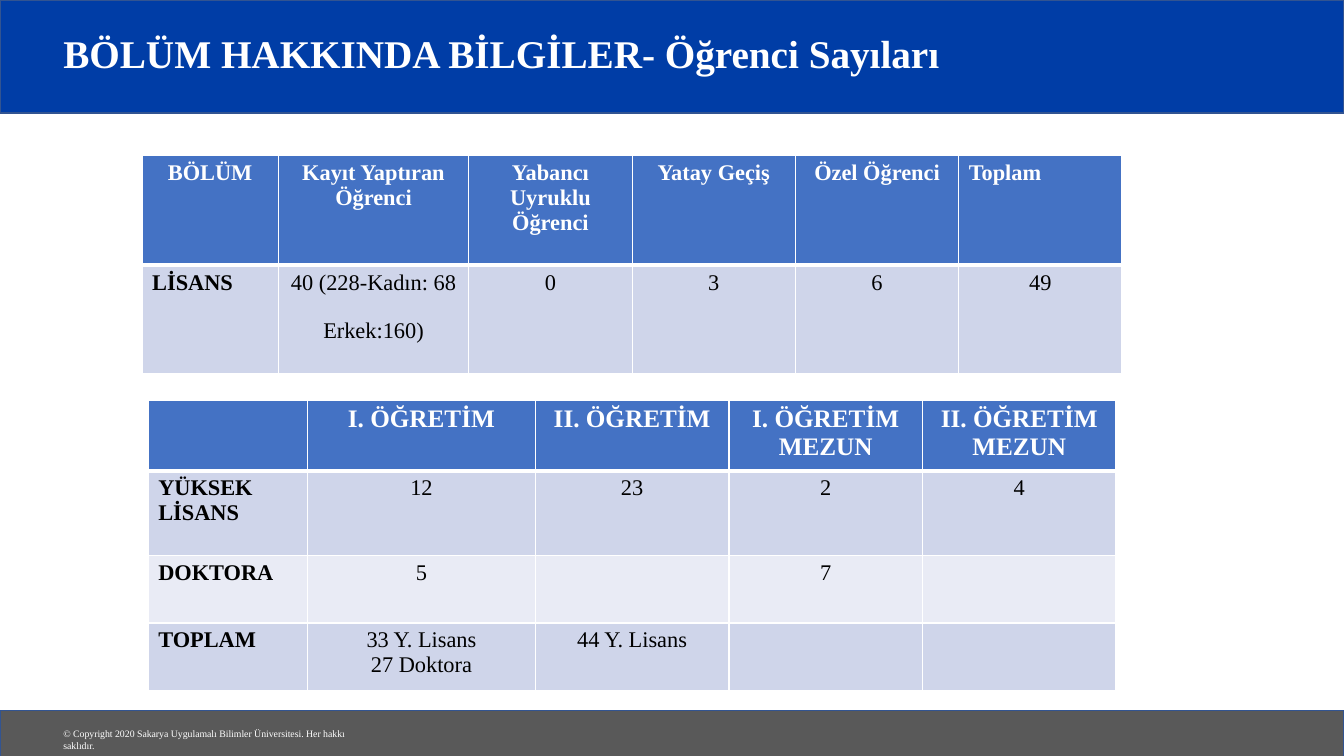
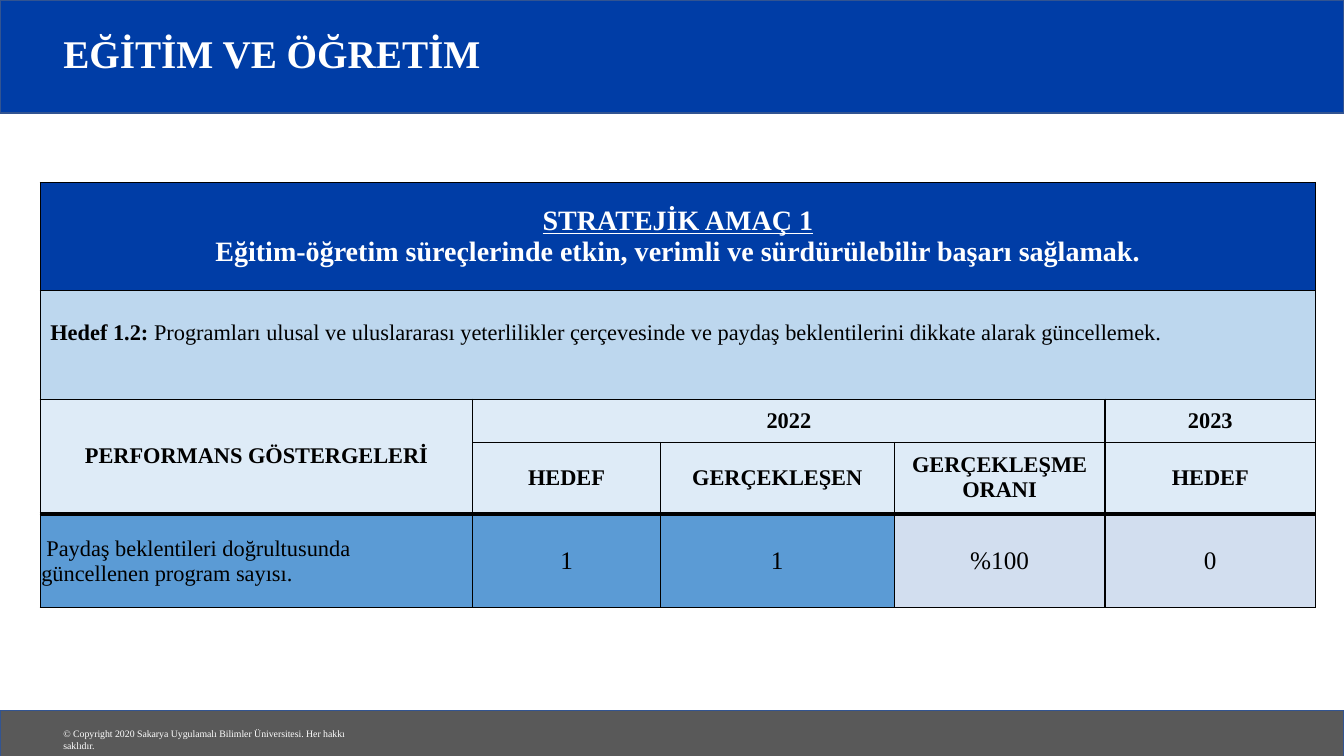
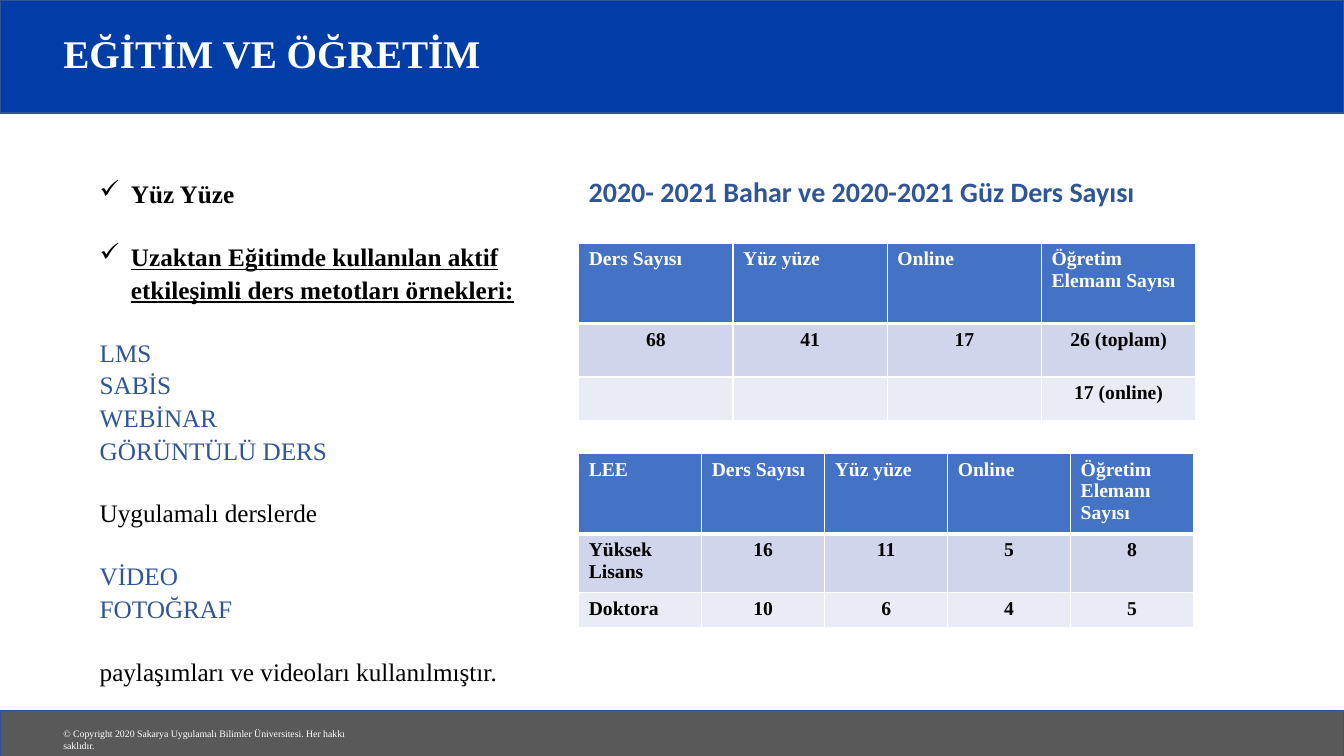
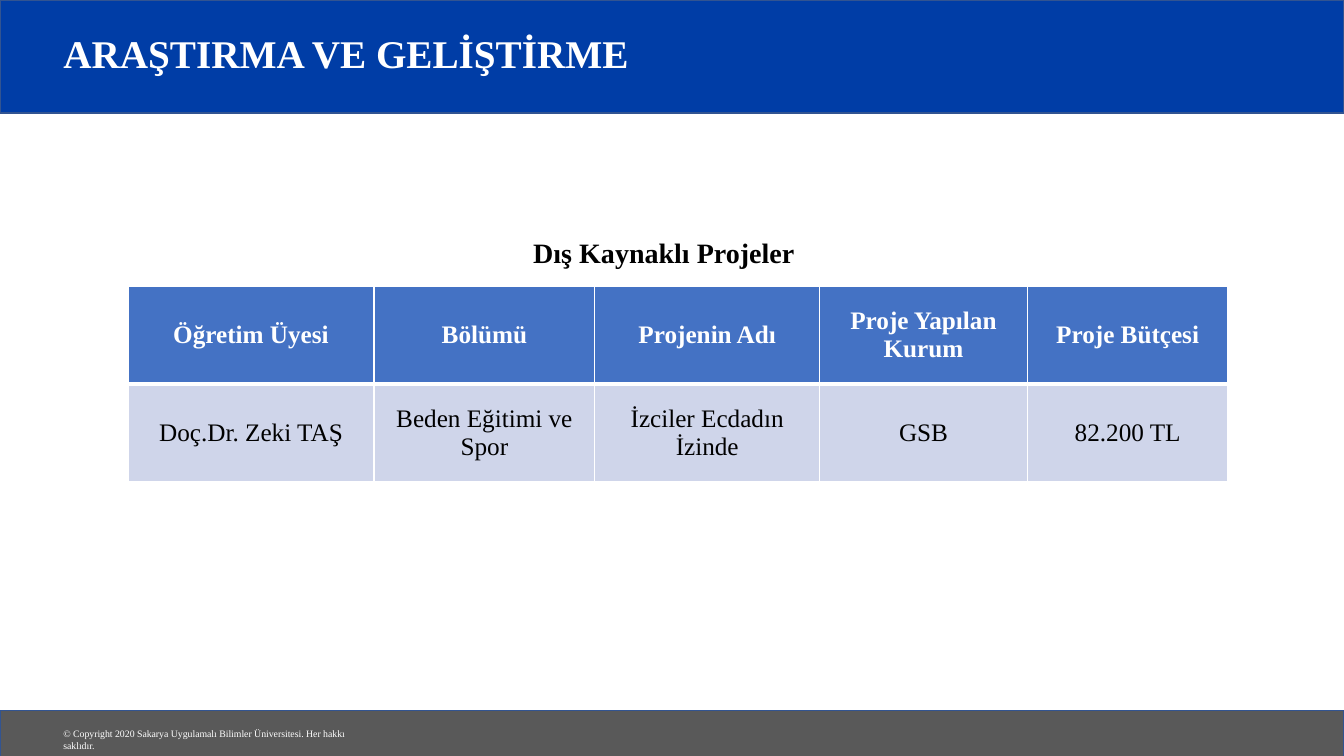
"""Build four slides on department figures, teaching goals and projects."""
from lxml import etree
from pptx import Presentation
from pptx.dml.color import RGBColor
from pptx.enum import shapes, text
from pptx.oxml import ns
from pptx.util import Inches, Pt

WHITE = RGBColor(0xFF, 0xFF, 0xFF)
BLACK = RGBColor(0x00, 0x00, 0x00)
NAVY = RGBColor(0x00, 0x3D, 0xA6)
GREY = RGBColor(0x59, 0x59, 0x59)
BAND_LINE = RGBColor(0x32, 0x54, 0x91)
LINK_BLUE = RGBColor(0x2F, 0x55, 0x97)
HEADER = RGBColor(0x44, 0x72, 0xC4)
ROW_DARK = RGBColor(0xCF, 0xD5, 0xEA)
ROW_LIGHT = RGBColor(0xE9, 0xEB, 0xF5)
GOAL_BLUE = RGBColor(0xBD, 0xD7, 0xEE)
PALE_BLUE = RGBColor(0xDE, 0xEB, 0xF7)
MID_BLUE = RGBColor(0x5B, 0x9B, 0xD5)
RESULT_BLUE = RGBColor(0xD2, 0xDE, 0xEF)

SERIF = "Times New Roman"
LEFT, CENTER = text.PP_ALIGN.LEFT, text.PP_ALIGN.CENTER
TOP, MIDDLE = text.MSO_ANCHOR.TOP, text.MSO_ANCHOR.MIDDLE
COPYRIGHT = "© Copyright 2020 Sakarya Uygulamalı Bilimler Üniversitesi. Her hakkı saklıdır."


def add_text(slide, box, lines, size, color, bold=False, font=SERIF, align=LEFT, anchor=TOP):
    """Add a wrapping text box and return its paragraphs."""
    frame = slide.shapes.add_textbox(*map(Inches, box)).text_frame
    frame.word_wrap = True
    frame.vertical_anchor = anchor
    frame.text = lines
    for paragraph in frame.paragraphs:
        paragraph.alignment = align
        paragraph.font.name = font
        paragraph.font.size = Pt(size)
        paragraph.font.bold = bold
        paragraph.font.color.rgb = color
    return frame.paragraphs


def add_grid(slide, corner, widths, heights, rows, sizes, fills, bold_columns=1,
             left_columns=1, header_align=CENTER, anchor=TOP, border=WHITE):
    """Add a bordered table; a white-bordered one has a thick rule under its header."""
    frame = slide.shapes.add_table(len(rows), len(widths), *map(Inches, corner),
                                   Inches(sum(widths)), Inches(sum(heights)))
    table = frame.table
    table.first_row = table.horz_banding = False
    for column, width in zip(table.columns, widths):
        column.width = Inches(width)
    for row, height in zip(table.rows, heights):
        row.height = Inches(height)
    for r, values in enumerate(rows):
        for c, value in enumerate(values):
            cell = table.cell(r, c)
            cell.text = value
            cell.vertical_anchor = anchor
            properties = cell._tc.get_or_add_tcPr()
            for side in ("lnL", "lnR", "lnT", "lnB"):
                thick = border == WHITE and (r, side) in ((0, "lnB"), (1, "lnT"))
                line = etree.SubElement(properties, ns.qn(f"a:{side}"), w=str(Pt(3 if thick else 1)))
                solid = etree.SubElement(line, ns.qn("a:solidFill"))
                etree.SubElement(solid, ns.qn("a:srgbClr"), val=str(border))
            cell.fill.solid()
            cell.fill.fore_color.rgb = fills[r]
            is_header = fills[r] in (HEADER, NAVY)
            for paragraph in cell.text_frame.paragraphs:
                if is_header:
                    paragraph.alignment = header_align
                else:
                    paragraph.alignment = LEFT if c < left_columns else CENTER
                paragraph.font.name = SERIF
                paragraph.font.size = Pt(sizes[r])
                paragraph.font.bold = is_header or c < bold_columns
                paragraph.font.color.rgb = WHITE if is_header else BLACK
    return table


presentation = Presentation()
presentation.slide_width = Inches(13.33)
presentation.slide_height = Inches(7.5)

titles = ["BÖLÜM HAKKINDA BİLGİLER- Öğrenci Sayıları", "EĞİTİM VE ÖĞRETİM",
          "EĞİTİM VE ÖĞRETİM", "ARAŞTIRMA VE GELİŞTİRME"]
slides = []
for title in titles:
    slide = presentation.slides.add_slide(presentation.slide_layouts[6])
    for top, height, color in ((0, 1.12, NAVY), (7.05, 0.46, GREY)):
        band = slide.shapes.add_shape(shapes.MSO_SHAPE.RECTANGLE, Inches(0), Inches(top),
                                      presentation.slide_width, Inches(height))
        band.shadow.inherit = False
        band.fill.solid()
        band.fill.fore_color.rgb = color
        band.line.color.rgb = BAND_LINE
        band.line.width = Pt(1)
    add_text(slide, (0.53, 7.17, 3.29, 0.22), COPYRIGHT, 7, WHITE)
    heading = add_text(slide, (0.53, 0.19, 11.03, 0.73), title, 28, WHITE, True, anchor=MIDDLE)
    heading[0].line_spacing = 0.9
    slides.append(slide)
students, goals, teaching, research = slides

undergraduates = add_grid(
    students, (1.41, 1.54), [1.35, 1.89] + [1.62] * 4, [1.09, 1.08],
    [["BÖLÜM", "Kayıt Yaptıran Öğrenci", "Yabancı Uyruklu Öğrenci", "Yatay Geçiş",
      "Özel Öğrenci", "Toplam"],
     ["LİSANS", "40 (228-Kadın: 68\nErkek:160)", "0", "3", "6", "49"]],
    [16, 16], [HEADER, ROW_DARK])
undergraduates.cell(0, 5).text_frame.paragraphs[0].alignment = LEFT
undergraduates.cell(1, 1).text_frame.paragraphs[1].space_before = Pt(17)
add_grid(
    students, (1.47, 3.97), [1.58, 2.26] + [1.92] * 3, [0.67, 0.84, 0.67, 0.67],
    [["", "I. ÖĞRETİM", "II. ÖĞRETİM", "I. ÖĞRETİM MEZUN", "II. ÖĞRETİM MEZUN"],
     ["YÜKSEK LİSANS", "12", "23", "2", "4"],
     ["DOKTORA", "5", "", "7", ""],
     ["TOPLAM", "33 Y. Lisans\n27 Doktora", "44 Y. Lisans", "", ""]],
    [18, 16, 16, 16], [HEADER, ROW_DARK, ROW_LIGHT, ROW_DARK])

goal_widths = [4.29, 1.86, 2.32, 2.09, 2.09]
targets = add_grid(
    goals, (0.4, 1.81), goal_widths, [1.07, 1.08, 0.43, 0.7],
    [["STRATEJİK AMAÇ 1\nEğitim-öğretim süreçlerinde etkin, verimli ve sürdürülebilir başarı sağlamak.",
      "", "", "", ""],
     ["", "", "", "", ""],
     ["PERFORMANS GÖSTERGELERİ", "2022", "", "", "2023"],
     ["", "HEDEF", "GERÇEKLEŞEN", "GERÇEKLEŞME ORANI", "HEDEF"]],
    [20, 16, 16, 16], [NAVY, GOAL_BLUE, PALE_BLUE, PALE_BLUE],
    bold_columns=5, left_columns=0, anchor=MIDDLE, border=BLACK)
targets.cell(0, 0).text_frame.paragraphs[0].font.underline = True
goal_cell = targets.cell(1, 0)
goal_cell.margin_bottom = Inches(0.29)
goal = goal_cell.text_frame.paragraphs[0]
goal.alignment = LEFT
for words, bold in (("Hedef 1.2: ", True),
                    ("Programları ulusal ve uluslararası yeterlilikler çerçevesinde ve paydaş "
                     "beklentilerini dikkate alarak güncellemek.", False)):
    run = goal.add_run()
    run.text = words
    run.font.bold = bold
for first, last in (((0, 0), (0, 4)), ((1, 0), (1, 4)), ((2, 0), (3, 0)), ((2, 1), (2, 3))):
    targets.cell(*first).merge(targets.cell(*last))

results = add_grid(
    goals, (0.4, 5.11), goal_widths, [0.92],
    [["Paydaş beklentileri doğrultusunda\vgüncellenen program sayısı.", "1", "1", "%100", "0"]],
    [18], [RESULT_BLUE], bold_columns=0, anchor=MIDDLE, border=BLACK)
for c in range(3):
    results.cell(0, c).fill.fore_color.rgb = MID_BLUE
indicator = results.cell(0, 0)
indicator.margin_left = indicator.margin_right = Inches(0.01)
indicator_text = indicator.text_frame.paragraphs[0]
indicator_text.font.size = Pt(16)
indicator_text._p.get_or_add_pPr().set("indent", str(Inches(0.05)))

methods = ["Yüz Yüze",
           "Uzaktan Eğitimde kullanılan aktif etkileşimli ders metotları örnekleri:",
           "LMS", "SABİS", "WEBİNAR", "GÖRÜNTÜLÜ DERS", "Uygulamalı derslerde",
           "VİDEO", "FOTOĞRAF", "paylaşımları ve videoları kullanılmıştır."]
method_lines = add_text(teaching, (0.89, 1.7, 4.72, 5.1), "\n".join(methods), 18, BLACK)
for index, paragraph in enumerate(method_lines):
    paragraph.line_spacing = 1.08
    if index in (1, 2, 6, 7, 9):
        paragraph.space_before = Pt(21.6)
    if index in (2, 3, 4, 5, 7, 8):
        paragraph.font.color.rgb = LINK_BLUE
for paragraph in method_lines[:2]:
    properties = paragraph._p.get_or_add_pPr()
    properties.set("marL", str(Inches(0.31)))
    properties.set("indent", str(Inches(-0.31)))
    bullet = etree.Element(ns.qn("a:buChar"), char="✓")
    properties.find(ns.qn("a:defRPr")).addprevious(bullet)
    paragraph.font.bold = True
method_lines[1].font.underline = True

add_text(teaching, (5.74, 1.68, 6.45, 0.44), "2020- 2021 Bahar ve 2020-2021 Güz Ders Sayısı",
         20, LINK_BLUE, True, font="Calibri")
course_headers = ["Ders Sayısı", "Yüz yüze", "Online", "Öğretim Elemanı Sayısı"]
course_fills = [HEADER, ROW_DARK, ROW_LIGHT]
add_grid(teaching, (5.74, 2.41), [1.53] * 4, [0.8, 0.53, 0.43],
         [course_headers, ["68", "41", "17", "26 (toplam)"], ["", "", "", "17 (online)"]],
         [14] * 3, course_fills, bold_columns=4, left_columns=0, header_align=LEFT)
add_grid(teaching, (5.74, 4.5), [1.22] * 5, [0.78, 0.58, 0.35],
         [["LEE"] + course_headers, ["Yüksek Lisans", "16", "11", "5", "8"],
          ["Doktora", "10", "6", "4", "5"]],
         [14] * 3, course_fills, bold_columns=5, header_align=LEFT)

add_text(research, (3.27, 2.29, 6.63, 0.5), "Dış Kaynaklı Projeler", 20, BLACK, True, align=CENTER)
add_grid(research, (1.27, 2.84), [2.44, 2.19, 2.23, 2.06, 1.99], [0.97, 0.97],
         [["Öğretim Üyesi", "Bölümü", "Projenin Adı", "Proje Yapılan Kurum", "Proje Bütçesi"],
          ["Doç.Dr. Zeki TAŞ", "Beden Eğitimi ve Spor", "İzciler Ecdadın İzinde", "GSB", "82.200 TL"]],
         [18, 18], [HEADER, ROW_DARK], bold_columns=0, left_columns=0, anchor=MIDDLE)

presentation.save("out.pptx")
